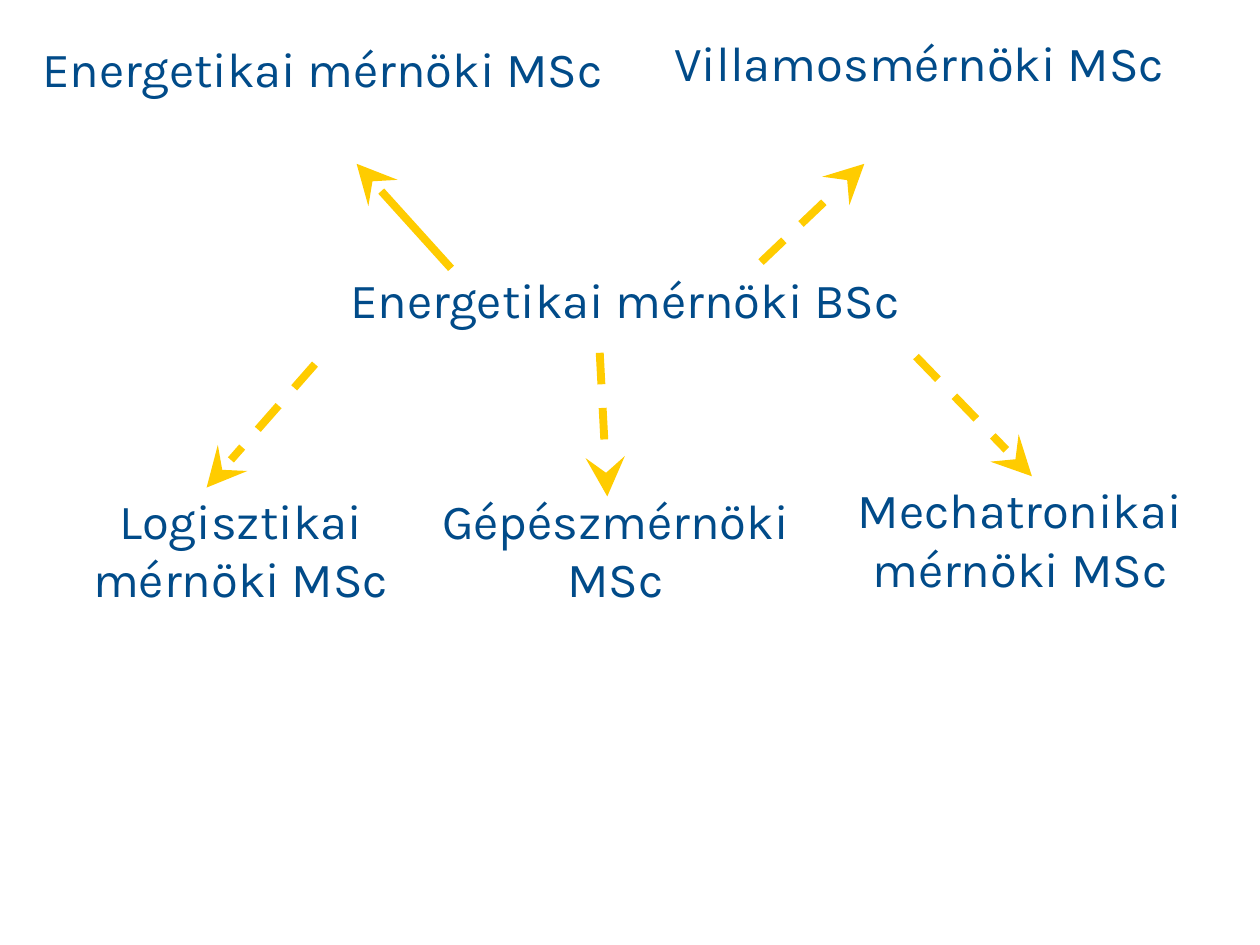
from lxml.etree import SubElement as Sub
from pptx import Presentation
from pptx.dml.color import RGBColor
from pptx.enum.dml import MSO_LINE_DASH_STYLE as Dash
from pptx.enum.shapes import MSO_CONNECTOR_TYPE as Link
from pptx.enum.text import MSO_AUTO_SIZE as Fit, PP_ALIGN as Align
from pptx.oxml.ns import qn
from pptx.util import Inches, Pt

BLUE = RGBColor(0x01, 0x4B, 0x89)
GOLD = RGBColor(0xFF, 0xCC, 0x00)


def write(frame, text, font="Karla", size=28, color=BLUE, align=Align.CENTER):
    par = frame.paragraphs[0]
    par.alignment = align
    run = par.add_run()
    run.text = text
    run.font.name = font
    run.font.size = Pt(size)
    run.font.color.rgb = color


class Chart:
    """Draws degree names and the arrows between them on one slide."""

    def __init__(self, slide, color=GOLD, width=4.5):
        self.shapes = slide.shapes
        self.color = color
        self.width = Pt(width)

    def label(self, text, *place):
        box = self.shapes.add_textbox(*map(Inches, place))
        frame = box.text_frame
        frame.word_wrap = True
        frame.auto_size = Fit.SHAPE_TO_FIT_TEXT
        write(frame, text)

    def arrow(self, start, end, dash=Dash.DASH):
        ends = map(Inches, start + end)
        link = self.shapes.add_connector(Link.STRAIGHT, *ends)
        line = link.line
        line.color.rgb = self.color
        line.width = self.width
        line.dash_style = dash
        tip = Sub(line._get_or_add_ln(), qn("a:tailEnd"))
        for key, value in (("type", "stealth"), ("w", "lg"), ("len", "lg")):
            tip.set(key, value)
        Sub(link._element.spPr, qn("a:effectLst"))


def main():
    deck = Presentation()
    deck.slide_width, deck.slide_height = Inches(10), Inches(7.5)
    chart = Chart(deck.slides.add_slide(deck.slide_layouts[6]))

    one, two = 0.57, 1.75
    chart.label("Energetikai mérnöki BSc", 0.43, 2.09, 9.06, one)
    chart.label("Energetikai mérnöki MSc", 0.22, 0.26, 4.68, one)
    chart.label("Villamosmérnöki MSc", 4.95, 0.21, 4.69, one)
    chart.label("Logisztikai mérnöki MSc", 0.19, 3.84, 3.44, two)
    chart.label("Gépészmérnöki MSc", 3.35, 3.84, 3.07, two)
    chart.label("Mechatronikai mérnöki MSc", 6.56, 3.76, 3.07, two)

    chart.arrow((3.58, 2.13), (2.83, 1.3), dash=None)
    chart.arrow((6.04, 2.08), (6.86, 1.3))
    chart.arrow((2.5, 2.89), (1.64, 3.87))
    chart.arrow((4.76, 2.8), (4.82, 3.94))
    chart.arrow((7.27, 2.83), (8.19, 3.78))

    deck.save("out.pptx")


if __name__ == "__main__":
    main()
